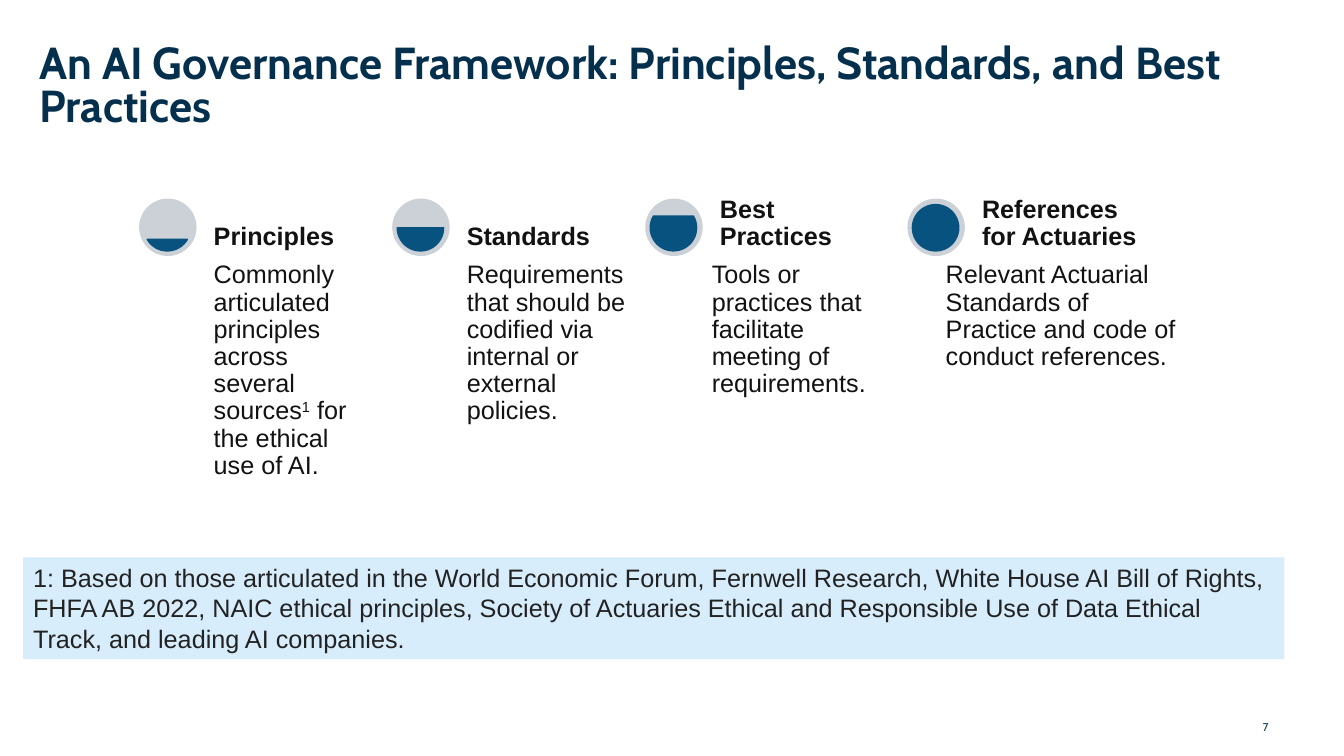
from dataclasses import dataclass

import pptx
import pptx.dml.color
import pptx.enum.shapes
import pptx.enum.text
import pptx.util

Inches = pptx.util.Inches
SHAPES = pptx.enum.shapes.MSO_SHAPE
ANCHOR = pptx.enum.text.MSO_ANCHOR
ALIGN = pptx.enum.text.PP_ALIGN


@dataclass(frozen=True)
class Theme:
    """Colours, fonts and type sizes of the slide."""
    navy: str = "05304D"
    blue: str = "085280"
    grey: str = "CCD1D8"
    pale: str = "D7EDFC"
    ink: str = "121212"
    note_ink: str = "222222"
    heading_font: str = "Cabin"
    body_font: str = "Arial"
    title_size: int = 32
    body_size: int = 18
    number_size: int = 8


class FrameworkSlide:
    """Draws the elements of the slide in one theme."""

    def __init__(self, slide, theme):
        self.slide = slide
        self.theme = theme

    def colour(self, value):
        return pptx.dml.color.RGBColor.from_string(value)

    def set_text(self, shape, parts, size, font, colour, bold=False, inset=0,
                 anchor=ANCHOR.TOP, align=ALIGN.LEFT, spacing=None):
        frame = shape.text_frame
        frame.word_wrap = True
        frame.vertical_anchor = anchor
        frame.margin_left = frame.margin_right = Inches(inset)
        frame.margin_top = frame.margin_bottom = Inches(min(inset, 0.05))
        paragraph = frame.paragraphs[0]
        paragraph.alignment = align
        if spacing:
            paragraph.line_spacing = spacing
        for index, part in enumerate(parts):
            run = paragraph.add_run()
            run.text = part
            run.font.size = pptx.util.Pt(size)
            run.font.name = font
            run.font.bold = bold
            run.font.color.rgb = self.colour(colour)
            if index % 2:
                run.font._element.set("baseline", "30000")

    def text(self, left, top, width, height, parts, size, font, colour, **style):
        box = self.slide.shapes.add_textbox(
            Inches(left), Inches(top), Inches(width), Inches(height))
        self.set_text(box, parts, size, font, colour, **style)

    def shape(self, kind, left, top, width, height, fill, line=None):
        shape = self.slide.shapes.add_shape(
            kind, Inches(left), Inches(top), Inches(width), Inches(height))
        shape.shadow.inherit = False
        shape.fill.solid()
        shape.fill.fore_color.rgb = self.colour(fill)
        if line:
            shape.line.color.rgb = self.colour(line)
            shape.line.width = pptx.util.Pt(1)
        else:
            shape.line.fill.background()
        return shape

    def gauge(self, left, top, tilt):
        """Draw a disc filled up to the chord that starts at tilt degrees."""
        self.shape(SHAPES.OVAL, left, top, 0.57, 0.57, self.theme.grey)
        level = self.shape(SHAPES.CHORD, left + 0.05, top + 0.06, 0.46, 0.46,
                           self.theme.blue, self.theme.blue)
        units_per_degree = 0.6
        level.adjustments[0] = tilt % 360 * units_per_degree
        level.adjustments[1] = (180 - tilt) * units_per_degree

    def column(self, left, tilt, heading, body_left, body_width, body):
        theme = self.theme
        style = dict(size=theme.body_size, font=theme.body_font,
                     colour=theme.ink, inset=0.05, spacing=0.9)
        self.gauge(left, 1.97, tilt)
        self.text(body_left, 2.55, body_width, 2.42, body, **style)
        self.text(left + 0.69, 1.97, 1.7, 0.57, [heading], bold=True,
                  anchor=ANCHOR.BOTTOM, **style)

    def title(self, words):
        theme = self.theme
        self.text(0.39, 0.45, 12.51, 0.87, [words], theme.title_size,
                  theme.heading_font, theme.navy, bold=True, spacing=0.8)

    def footnote(self, words):
        theme = self.theme
        band = self.shape(SHAPES.RECTANGLE, 0.23, 5.53, 12.51, 1.01, theme.pale)
        self.set_text(band, [words], theme.body_size, theme.body_font,
                      theme.note_ink, inset=0.1)

    def page_number(self, number):
        theme = self.theme
        self.text(12.24, 7.15, 0.34, 0.13, [number], theme.number_size,
                  theme.heading_font, theme.navy, anchor=ANCHOR.MIDDLE,
                  align=ALIGN.RIGHT)


COLUMNS = [
    (1.38, 30, "Principles", 2.07, 1.7,
     ["Commonly articulated principles across several sources", "1",
      " for the ethical use of AI."]),
    (3.89, 0, "Standards", 4.58, 1.7,
     ["Requirements that should be codified via internal or external policies."]),
    (6.4, -30, "Best Practices", 7.01, 1.87,
     ["Tools or practices that facilitate meeting of requirements."]),
    (9, -90, "References for Actuaries", 9.33, 2.42,
     ["Relevant Actuarial Standards of Practice and code of conduct references."]),
]


def main():
    deck = pptx.Presentation()
    deck.slide_width, deck.slide_height = Inches(13.33), Inches(7.5)
    page = FrameworkSlide(deck.slides.add_slide(deck.slide_layouts[6]), Theme())
    page.page_number("7")
    page.title("An AI Governance Framework: Principles, Standards, and Best Practices")
    page.footnote(
        "1: Based on those articulated in the World Economic Forum, Fernwell "
        "Research, White House AI Bill of Rights, FHFA AB 2022, NAIC ethical "
        "principles, Society of Actuaries Ethical and Responsible Use of Data "
        "Ethical Track, and leading AI companies.")
    for column in COLUMNS:
        page.column(*column)
    deck.save("out.pptx")


if __name__ == "__main__":
    main()
